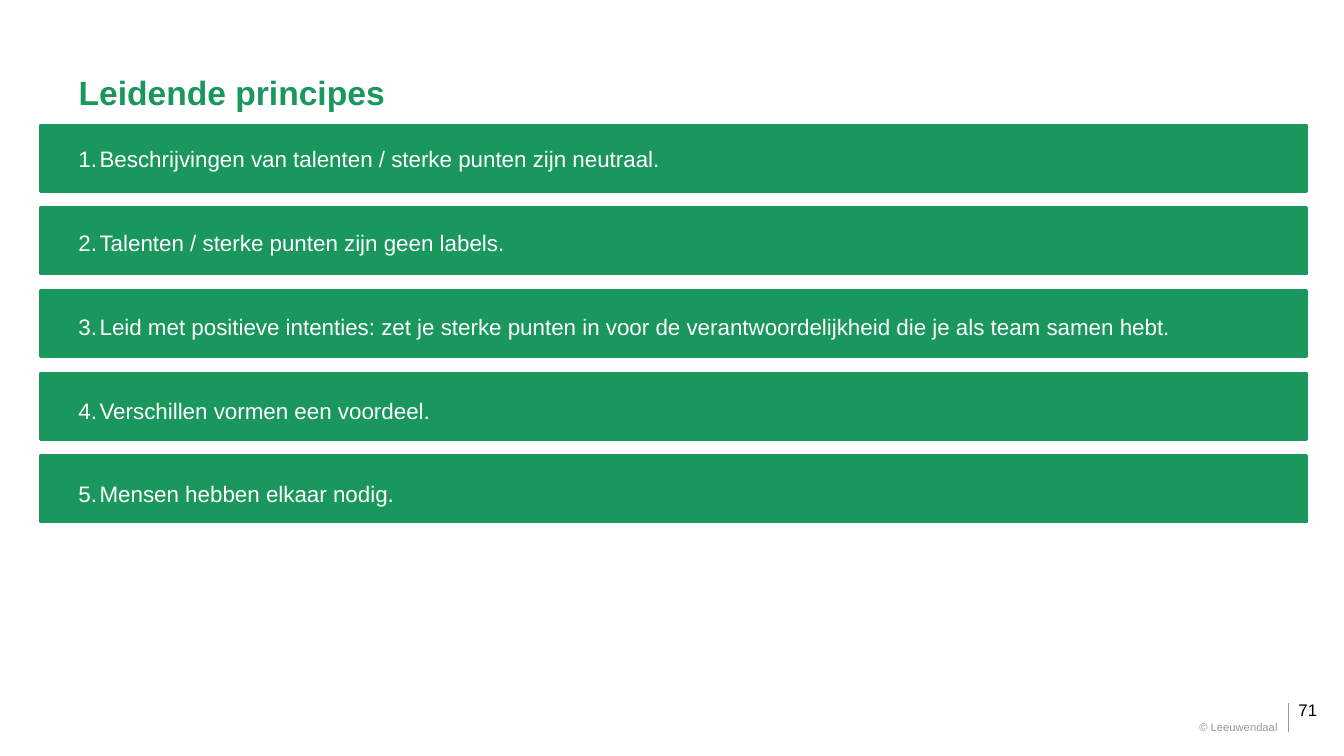
from lxml.etree import SubElement
from pptx import Presentation
from pptx.dml.color import RGBColor
from pptx.enum.shapes import MSO_CONNECTOR, MSO_SHAPE
from pptx.enum.text import MSO_ANCHOR, PP_ALIGN
from pptx.oxml.ns import qn
from pptx.util import Inches, Pt

GREEN = RGBColor(0x19, 0x97, 0x5D)
WHITE = RGBColor(0xFF, 0xFF, 0xFF)
BLACK = RGBColor(0x00, 0x00, 0x00)
GREY = RGBColor(0x99, 0x99, 0x99)

RULES = [
    "Beschrijvingen van talenten / sterke punten zijn neutraal.",
    "Talenten / sterke punten zijn geen labels.",
    "Leid met positieve intenties: zet je sterke punten in voor de "
    "verantwoordelijkheid die je als team samen hebt.",
    "Verschillen vormen een voordeel.",
    "Mensen hebben elkaar nodig.",
]


def format_all(item, values):
    for name, value in values.items():
        setattr(item, name, value)


def style(para, size, color, bold=False):
    format_all(para.font, {"name": "Arial", "size": Pt(size), "bold": bold})
    para.font.color.rgb = color


def add_title(slide, text):
    title = slide.shapes.title
    format_all(title, {"left": Inches(0.68), "top": Inches(0.66),
                       "width": Inches(12.22), "height": Inches(0.5)})
    frame = title.text_frame
    format_all(frame, {"text": text, "word_wrap": True,
                       "vertical_anchor": MSO_ANCHOR.MIDDLE})
    para = frame.paragraphs[0]
    para.alignment = PP_ALIGN.LEFT
    style(para, 24, GREEN, True)


def add_bar(slide, top):
    bar = slide.shapes.add_shape(MSO_SHAPE.RECTANGLE, Inches(0.4), Inches(top),
                                 Inches(12.56), Inches(0.66))
    bar.shadow.inherit = False
    bar.fill.solid()
    bar.fill.fore_color.rgb = GREEN
    bar.line.color.rgb = GREEN
    bar.line.width = Pt(2)


def add_text(slide, left, top, width, height):
    box = slide.shapes.add_textbox(Inches(left), Inches(top),
                                   Inches(width), Inches(height))
    box.text_frame.word_wrap = True
    return box.text_frame


def add_number(para):
    props = para._p.get_or_add_pPr()
    format_indent = {"marL": Inches(0.21), "indent": Inches(-0.21)}
    for name, value in format_indent.items():
        props.set(name, str(int(value)))
    color = SubElement(props, qn("a:buClr"))
    SubElement(color, qn("a:srgbClr"), val=str(WHITE))
    SubElement(props, qn("a:buFont"), typeface="+mj-lt")
    SubElement(props, qn("a:buAutoNum"), type="arabicPeriod")


def add_list(slide, rules):
    frame = add_text(slide, 0.68, 1.39, 12, 3.69)
    frame.text = "\n".join(rules)
    for index, para in enumerate(frame.paragraphs):
        add_number(para)
        style(para, 16, WHITE)
        if index:
            para.space_before = Pt(40.7)


def add_note(slide, text, area, size, color, align):
    frame = add_text(slide, *area)
    format_all(frame, {"text": text, "margin_top": 0, "margin_bottom": 0})
    para = frame.paragraphs[0]
    para.alignment = align
    style(para, size, color)


def add_rule(slide):
    line = slide.shapes.add_connector(MSO_CONNECTOR.STRAIGHT, Inches(12.78),
                                      Inches(6.97), Inches(12.78), Inches(7.26))
    line.line.color.rgb = GREY
    line.line.width = Pt(0.75)
    SubElement(line._element.spPr, qn("a:effectLst"))


def main():
    deck = Presentation()
    format_all(deck, {"slide_width": Inches(13.33), "slide_height": Inches(7.5)})
    slide = deck.slides.add_slide(deck.slide_layouts[5])
    add_title(slide, "Leidende principes")
    for index in range(len(RULES)):
        add_bar(slide, 1.24 + 0.82 * index)
    add_list(slide, RULES)
    add_note(slide, "71", (12.78, 6.94, 0.55, 0.2), 12, BLACK, PP_ALIGN.LEFT)
    add_rule(slide)
    add_note(slide, "© Leeuwendaal", (11.15, 7.15, 1.62, 0.13), 8, GREY,
             PP_ALIGN.RIGHT)
    deck.save("out.pptx")


if __name__ == "__main__":
    main()
